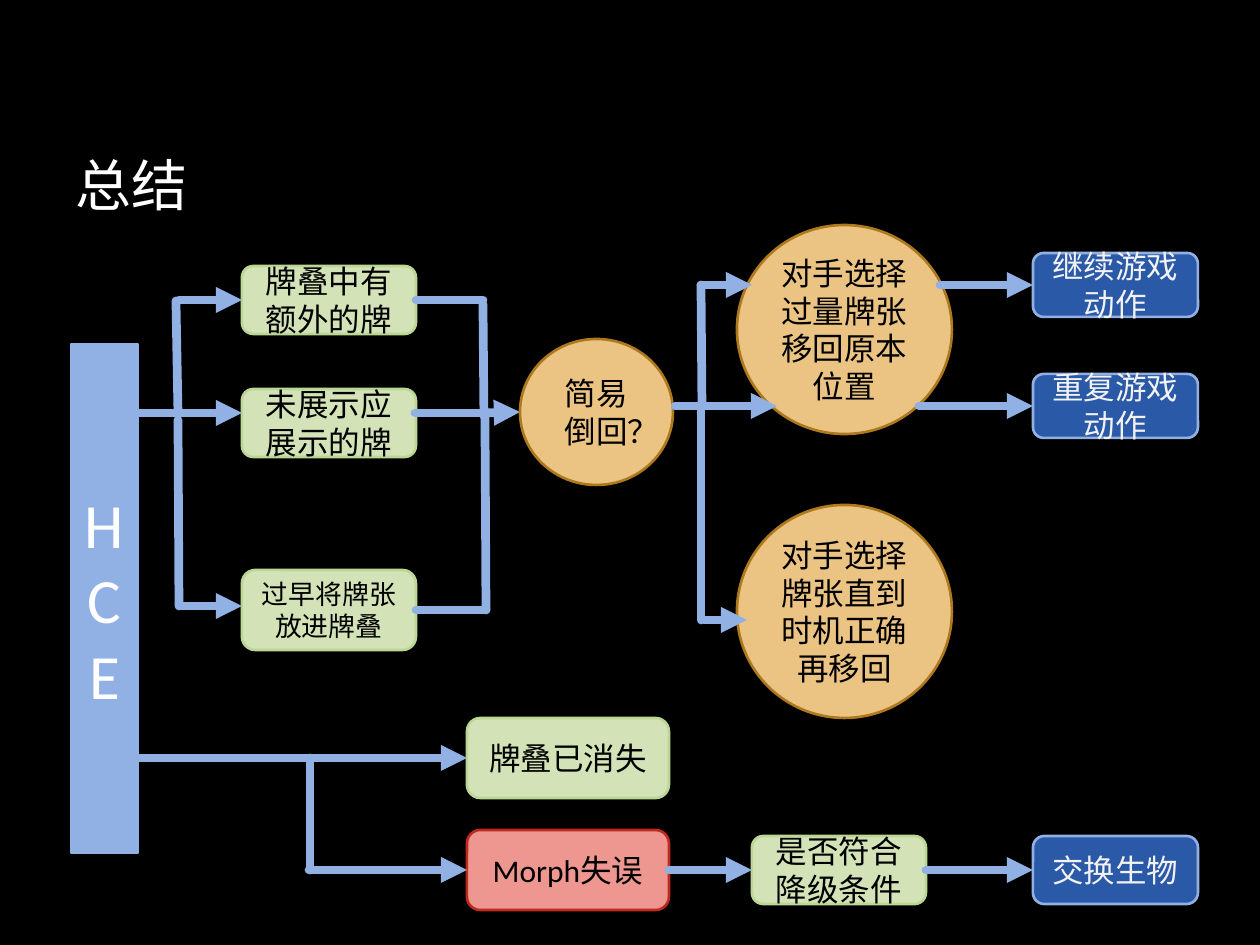
import dataclasses

import lxml.etree
import pptx
import pptx.dml.color
import pptx.enum.shapes
import pptx.enum.text
import pptx.oxml.ns
import pptx.util

PX = 914400 / 126
KINDS = pptx.enum.shapes.MSO_SHAPE
LEFT, RIGHT = 1, 3


@dataclasses.dataclass(frozen=True)
class Theme:
    font: str = "Calibri"
    background: str = "000000"
    title: str = "FFFFFF"
    arrow: str = "91B0E3"
    # Each style is fill, outline, text colour
    bar: tuple = ("91B0E3", "91B0E3", "FFFFFF")
    step: tuple = ("D3E3B7", "BCD694", "000000")
    choice: tuple = ("EBC483", "AE781D", "000000")
    error: tuple = ("EE9791", "C02A1E", "000000")
    action: tuple = ("2A59A8", "91B0E3", "F2F2F2")
    title_size: float = 32
    bar_size: float = 36
    body_size: float = 18
    small_size: float = 15.3
    outline: float = 1.5
    arrow_width: float = 5


THEME = Theme()


def emu(px):
    return pptx.util.Emu(round(px * PX))


def rgb(value):
    return pptx.dml.color.RGBColor.from_string(value)


def write(shape, text, size, color, align):
    frame = shape.text_frame
    frame.word_wrap = True
    frame.vertical_anchor = pptx.enum.text.MSO_ANCHOR.MIDDLE
    frame.text = text
    for para in frame.paragraphs:
        para.alignment = align
        for span in para.runs:
            span.font.name = THEME.font
            span.font.size = pptx.util.Pt(size)
            span.font.color.rgb = rgb(color)


class Region:
    """Places nodes and lines relative to a box on the page."""

    def __init__(self, page, box):
        self.shapes = page.shapes
        self.left, self.top, self.width, self.height = box

    def place(self, x, y):
        return emu(self.left + x), emu(self.top + y)

    def node(self, kind, box, text, style, size=THEME.body_size):
        x, y, width, height = box
        shape = self.shapes.add_shape(kind, *self.place(x, y), emu(width), emu(height))
        fill, outline, color = style
        shape.shadow.inherit = False
        shape.fill.solid()
        shape.fill.fore_color.rgb = rgb(fill)
        shape.line.color.rgb = rgb(outline)
        shape.line.width = pptx.util.Pt(THEME.outline)
        write(shape, text, size, color, pptx.enum.text.PP_ALIGN.CENTER)
        return shape

    def line(self, start, end, arrow=False):
        """Draw between two ends, each a point (x, y) or a (shape, site) pair."""
        joins = [not isinstance(point[0], int) for point in (start, end)]
        points = [(0, 0) if joined else self.place(*point)
                  for joined, point in zip(joins, (start, end))]
        connector = self.shapes.add_connector(
            pptx.enum.shapes.MSO_CONNECTOR.STRAIGHT, *points[0], *points[1])
        if joins[0]:
            connector.begin_connect(*start)
        if joins[1]:
            connector.end_connect(*end)
        connector.line.color.rgb = rgb(THEME.arrow)
        connector.line.width = pptx.util.Pt(THEME.arrow_width)
        qn = pptx.oxml.ns.qn
        properties = connector.element.spPr
        stroke = properties.find(qn("a:ln"))
        stroke.set("cap", "rnd")
        if arrow:
            lxml.etree.SubElement(stroke, qn("a:tailEnd"), type="triangle")
        lxml.etree.SubElement(properties, qn("a:effectLst"))

    def arrow(self, start, end):
        self.line(start, end, arrow=True)


def draw_title(page, box):
    title = page.shapes.add_textbox(*map(emu, box))
    write(title, "总结", THEME.title_size, THEME.title, pptx.enum.text.PP_ALIGN.LEFT)


def draw_sidebar(page, box):
    region = Region(page, box)
    region.node(KINDS.RECTANGLE, (0, 0, region.width, region.height), "HCE",
                THEME.bar, THEME.bar_size)


def draw_causes(page, box):
    """Three kinds of mistake, branching from the sidebar and merging again."""
    region = Region(page, box)
    extra, hidden, early = [
        region.node(KINDS.ROUNDED_RECTANGLE, (105, top, 174, height), text, THEME.step, size)
        for top, height, text, size in (
            (0, 68, "牌叠中有额外的牌", THEME.body_size),
            (123, 68, "未展示应展示的牌", THEME.body_size),
            (304, 80, "过早将牌张放进牌叠", THEME.small_size))]

    region.line((0, 147), (42, 147))
    region.line((39, 35), (41, 147))
    region.line((41, 154), (42, 340))
    region.arrow((42, 34), (extra, LEFT))
    region.arrow((42, 147), (105, 147))
    region.arrow((44, 340), (105, 340))

    region.line((extra, RIGHT), (346, 34))
    region.line((278, 147), (348, 147))
    region.line((early, RIGHT), (349, 344))
    region.line((346, 38), (347, 150))
    region.line((348, 150), (349, 344))
    region.arrow((346, 147), (383, 146))


def draw_rewind(page, box):
    """The rewind question, the opponent's choices and what follows them."""
    region = Region(page, box)
    for node_box, text in (
            ((0, 115, 153, 146), "简易倒回？"),
            ((217, 1, 215, 209), "对手选择过量牌张\n移回原本位置"),
            ((217, 281, 215, 213), "对手选择牌张直到时机正确再移回")):
        region.node(KINDS.OVAL, node_box, text, THEME.choice)

    region.line((155, 182), (183, 182))
    region.line((181, 61), (182, 182))
    region.line((181, 186), (181, 396))
    region.arrow((181, 61), (232, 61))
    region.arrow((183, 182), (257, 182))
    region.arrow((184, 396), (227, 396))

    for middle, start, text in ((61, 420, "继续游戏动作"), (182, 399, "重复游戏动作")):
        action = region.node(KINDS.ROUNDED_RECTANGLE, (513, middle - 32, 165, 64),
                             text, THEME.action)
        region.arrow((start, middle), (action, LEFT))


def draw_errors(page, box):
    """The lower branch: the vanished pile and the morph mistake."""
    region = Region(page, box)
    vanished, morph, demotion, exchange = [
        region.node(KINDS.ROUNDED_RECTANGLE, node_box, text, style)
        for node_box, text, style in (
            ((330, 0, 202, 80), "牌叠已消失", THEME.step),
            ((330, 112, 202, 80), "Morph失误", THEME.error),
            ((615, 118, 174, 68), "是否符合降级条件", THEME.step),
            ((896, 118, 165, 68), "交换生物", THEME.action))]

    region.arrow((0, 40), (vanished, LEFT))
    region.line((173, 40), (173, 152))
    region.line((172, 152), (291, 152))
    region.arrow((291, 152), (morph, LEFT))
    region.arrow((morph, RIGHT), (demotion, LEFT))
    region.arrow((demotion, RIGHT), (exchange, LEFT))


def main():
    deck = pptx.Presentation()
    deck.slide_width, deck.slide_height = emu(1260), emu(945)
    page = deck.slides.add_slide(deck.slide_layouts[6])
    page.background.fill.solid()
    page.background.fill.fore_color.rgb = rgb(THEME.background)
    draw_title(page, (63, 84, 1071, 200))
    draw_sidebar(page, (71, 344, 67, 509))
    draw_causes(page, (137, 266, 383, 384))
    draw_rewind(page, (520, 224, 678, 494))
    draw_errors(page, (137, 718, 1061, 192))
    deck.save("out.pptx")


if __name__ == "__main__":
    main()
